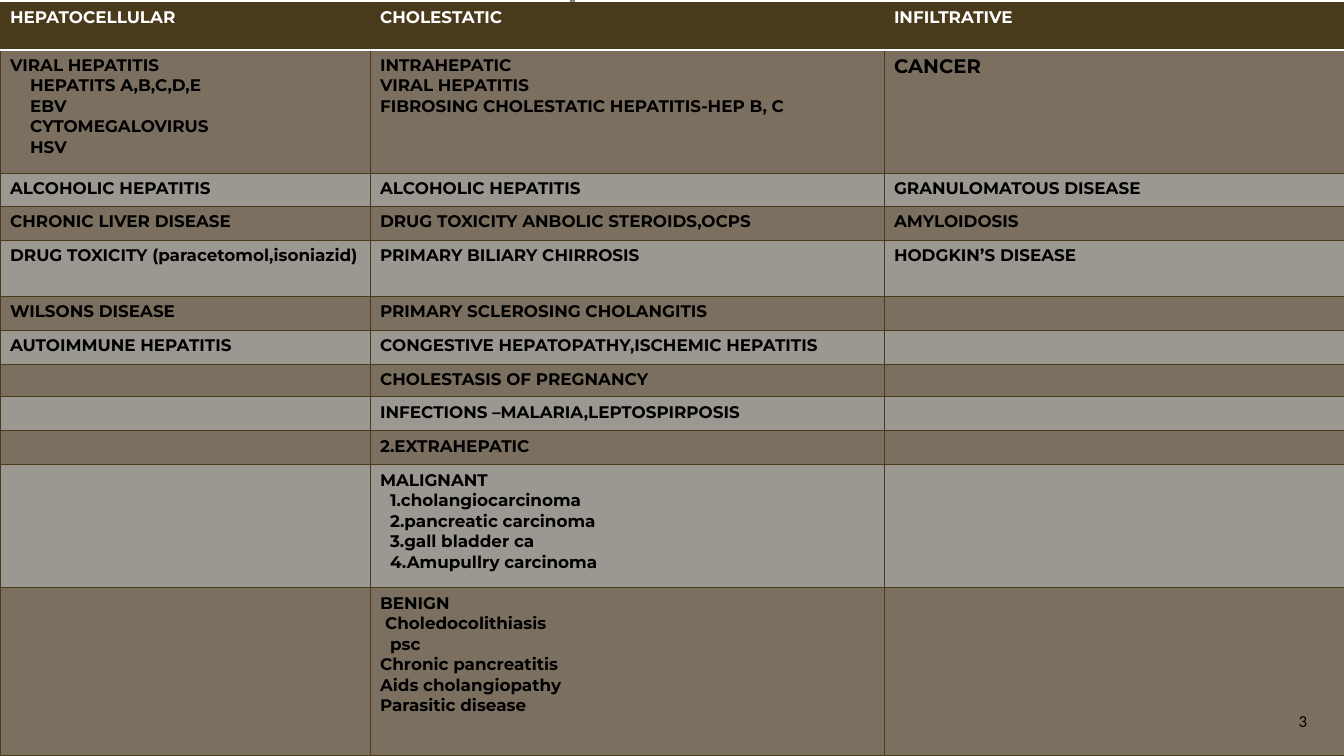
from dataclasses import dataclass

from lxml import etree
from pptx import Presentation
from pptx.dml.color import RGBColor
from pptx.enum.shapes import MSO_SHAPE
from pptx.enum.text import MSO_ANCHOR, PP_ALIGN
from pptx.oxml.ns import qn
from pptx.util import Pt

RECTANGLE = MSO_SHAPE.RECTANGLE
MIDDLE = MSO_ANCHOR.MIDDLE
RIGHT = PP_ALIGN.RIGHT
EMU_PER_PX = 914400 / 100.8


@dataclass(frozen=True)
class Theme:
    header: str = "4A3A1C"
    dark_band: str = "7B7060"
    light_band: str = "9B9791"
    divider: str = "7E8679"
    white: str = "FFFFFF"
    ink: str = "000000"
    table_font: str = "Montserrat"
    number_font: str = "Calibri"
    body_size: int = 12
    emphasis_size: int = 14
    grid_width: float = 0.5
    header_rule: int = 1
    indent_step: int = 5


def px(length):
    return round(length * EMU_PER_PX)


class SlideBuilder:
    def __init__(self, slide, theme):
        self.slide = slide
        self.theme = theme

    def bar(self, left, top, width, height, color):
        bar = self.slide.shapes.add_shape(RECTANGLE, px(left), px(top), px(width), px(height))
        bar.shadow.inherit = False
        bar.fill.solid()
        bar.fill.fore_color.rgb = RGBColor.from_string(color)
        bar.line.fill.background()

    def style_run(self, run, font, size, color, bold=False):
        run.font.name = font
        run.font.size = Pt(size)
        run.font.bold = bold
        run.font.color.rgb = RGBColor.from_string(color)

    def page_number(self, number, left, top, width, height):
        frame = self.slide.shapes.add_textbox(px(left), px(top), px(width), px(height)).text_frame
        frame.word_wrap = True
        frame.vertical_anchor = MIDDLE
        frame.text = number
        paragraph = frame.paragraphs[0]
        paragraph.alignment = RIGHT
        self.style_run(paragraph.runs[0], self.theme.number_font, self.theme.body_size, self.theme.ink)

    def border(self, cell, side, color, width):
        edge = etree.SubElement(cell._tc.get_or_add_tcPr(), qn(f"a:ln{side}"), w=str(Pt(width)))
        fill = etree.SubElement(edge, qn("a:solidFill"))
        etree.SubElement(fill, qn("a:srgbClr"), val=color)

    def cell_text(self, cell, lines, color):
        """Each line is a string, or a pair of indent steps and a string."""
        theme = self.theme
        pairs = [(0, line) if isinstance(line, str) else line for line in lines]
        cell.text_frame.text = "\n".join(text for _, text in pairs)
        for paragraph, (steps, text) in zip(cell.text_frame.paragraphs, pairs):
            if steps:
                paragraph._p.get_or_add_pPr().set("marL", str(px(steps * theme.indent_step)))
            size = theme.emphasis_size if text in EMPHASIZED else theme.body_size
            for run in paragraph.runs:
                self.style_run(run, theme.table_font, size, color, bold=True)
        if not pairs:
            # An empty cell keeps the body size, so its row stays low
            empty = cell.text_frame.paragraphs[0]._p
            etree.SubElement(empty, qn("a:endParaRPr"), sz=str(theme.body_size * 100))

    def table(self, left, top, widths, heights, rows):
        theme = self.theme
        table = self.slide.shapes.add_table(
            len(heights), len(widths), px(left), px(top), px(sum(widths)), px(sum(heights))
        ).table
        table.horz_banding = False
        for column, width in zip(table.columns, widths):
            column.width = px(width)
        for row, height in zip(table.rows, heights):
            row.height = px(height)
        rule = (theme.white, theme.header_rule)
        grid = (theme.header, theme.grid_width)
        for r, row in enumerate(rows):
            band = theme.header if r == 0 else theme.dark_band if r % 2 else theme.light_band
            edges = {"L": grid, "R": grid, "T": rule if r == 1 else grid, "B": rule if r == 0 else grid}
            for c, lines in enumerate(row):
                cell = table.cell(r, c)
                for side, (color, width) in edges.items():
                    self.border(cell, side, color, width)
                cell.fill.solid()
                cell.fill.fore_color.rgb = RGBColor.from_string(band)
                self.cell_text(cell, lines, theme.ink if r else theme.white)


# Causes by type of liver disease: one row each, a list of lines per cell
EMPHASIZED = {"CANCER"}
CAUSES = [
    [["HEPATOCELLULAR"], ["CHOLESTATIC"], ["INFILTRATIVE"]],
    [
        ["VIRAL HEPATITIS", (4, "HEPATITS A,B,C,D,E"), (4, "EBV"), (4, "CYTOMEGALOVIRUS"), (4, "HSV")],
        ["INTRAHEPATIC", "VIRAL HEPATITIS", "FIBROSING CHOLESTATIC HEPATITIS-HEP B, C"],
        ["CANCER"],
    ],
    [["ALCOHOLIC HEPATITIS"], ["ALCOHOLIC HEPATITIS"], ["GRANULOMATOUS DISEASE"]],
    [["CHRONIC LIVER DISEASE"], ["DRUG TOXICITY ANBOLIC STEROIDS,OCPS"], ["AMYLOIDOSIS"]],
    [["DRUG TOXICITY (paracetomol,isoniazid)"], ["PRIMARY BILIARY CHIRROSIS"], ["HODGKIN’S DISEASE"]],
    [["WILSONS DISEASE"], ["PRIMARY SCLEROSING CHOLANGITIS"], []],
    [["AUTOIMMUNE HEPATITIS"], ["CONGESTIVE HEPATOPATHY,ISCHEMIC HEPATITIS"], []],
    [[], ["CHOLESTASIS OF PREGNANCY"], []],
    [[], ["INFECTIONS –MALARIA,LEPTOSPIRPOSIS"], []],
    [[], ["2.EXTRAHEPATIC"], []],
    [
        [],
        [
            "MALIGNANT",
            (2, "1.cholangiocarcinoma"),
            (2, "2.pancreatic carcinoma"),
            (2, "3.gall bladder ca"),
            (2, "4.Amupullry carcinoma"),
        ],
        [],
    ],
    [
        [],
        [
            "BENIGN",
            (1, "Choledocolithiasis"),
            (2, "psc"),
            "Chronic pancreatitis",
            "Aids cholangiopathy",
            "Parasitic disease",
        ],
        [],
    ],
]
COLUMN_WIDTHS = [370, 514, 460]
ROW_HEIGHTS = [48, 123, 33, 34, 56, 34, 34, 33, 34, 34, 123, 168]


def main():
    presentation = Presentation()
    presentation.slide_width = px(1344)
    presentation.slide_height = px(756)
    theme = Theme()
    builder = SlideBuilder(presentation.slides.add_slide(presentation.slide_layouts[6]), theme)

    # Divider behind the table
    builder.bar(570, 0, 5, 756, theme.divider)

    # Table of causes
    builder.table(0, 2, COLUMN_WIDTHS, ROW_HEIGHTS, CAUSES)

    # Page number
    builder.page_number("3", 1239, 701, 78, 40)

    presentation.save("out.pptx")


if __name__ == "__main__":
    main()
